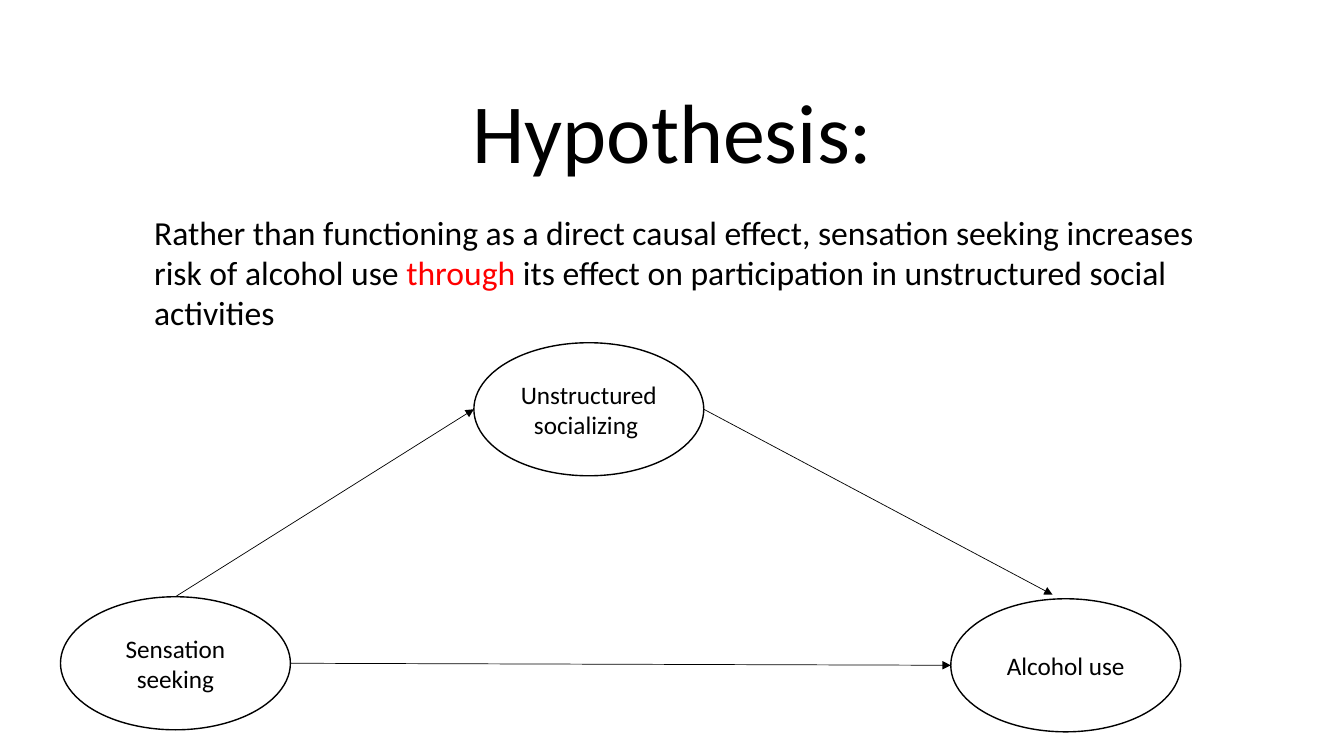
from lxml.etree import SubElement
from pptx import Presentation
from pptx.dml.color import RGBColor
from pptx.enum.shapes import MSO_CONNECTOR as CONN, MSO_SHAPE as SHAPE
from pptx.enum.text import MSO_ANCHOR as ANCHOR, PP_ALIGN as ALIGN
from pptx.oxml.ns import qn
from pptx.util import Inches, Pt

BLACK, RED = "000000", "FF0000"


def rgb(value):
    return RGBColor.from_string(value)


def write(sp, runs, size, align, anchor):
    tf = sp.text_frame
    tf.word_wrap = True
    tf.vertical_anchor = anchor
    p = tf.paragraphs[0]
    p.alignment = align
    for text, color in runs:
        r = p.add_run()
        r.text = text
        r.font.name = "Calibri"
        r.font.size = Pt(size)
        r.font.color.rgb = rgb(color)
    return p


prs = Presentation()
prs.slide_width, prs.slide_height = Inches(13.33), Inches(7.5)
s = prs.slides.add_slide(prs.slide_layouts[6])
s.background.fill.solid()
s.background.fill.fore_color.rgb = rgb("FFFFFF")

W, H = 2.28, 1.32
nodes = [
    ("Unstructured socializing ", 4.7, 3.4),
    ("Sensation seeking", 0.6, 5.92),
    ("Alcohol use", 9.43, 5.94),
]
for text, x, y in nodes:
    sp = s.shapes.add_shape(SHAPE.OVAL, Inches(x), Inches(y), Inches(W), Inches(H))
    sp.shadow.inherit = False
    sp.fill.background()
    sp.line.color.rgb = rgb(BLACK)
    sp.line.width = Pt(1)
    write(sp, [(text, BLACK)], 18, ALIGN.CENTER, ANCHOR.MIDDLE)

(social_x, social_y), (seek_x, seek_y), (use_x, use_y) = [n[1:] for n in nodes]
arrows = [
    (seek_x + W / 2, seek_y, social_x, social_y + H / 2),
    (social_x + W, social_y + H / 2, 10.44, 5.9),
    (seek_x + W, seek_y + H / 2, use_x, use_y + H / 2),
]
for ends in arrows:
    c = s.shapes.add_connector(CONN.STRAIGHT, *map(Inches, ends))
    c.line.color.rgb = rgb(BLACK)
    c.line.width = Pt(0.5)
    SubElement(c.line._get_or_add_ln(), qn("a:tailEnd"), type="triangle")
    SubElement(c._element.spPr, qn("a:effectLst"))

title = s.shapes.add_textbox(Inches(0.92), Inches(0.4), Inches(11.5), Inches(1.45))
p = write(title, [("Hypothesis:", BLACK)], 60, ALIGN.CENTER, ANCHOR.BOTTOM)
p.line_spacing = 0.9

body = s.shapes.add_textbox(Inches(1.43), Inches(2.05), Inches(10.8), Inches(1.31))
write(body, [
    ("Rather than functioning as a direct causal effect, sensation seeking "
     "increases risk of alcohol use ", BLACK),
    ("through", RED),
    (" its effect on participation in unstructured social activities", BLACK),
], 24, ALIGN.LEFT, ANCHOR.TOP)

prs.save("out.pptx")
